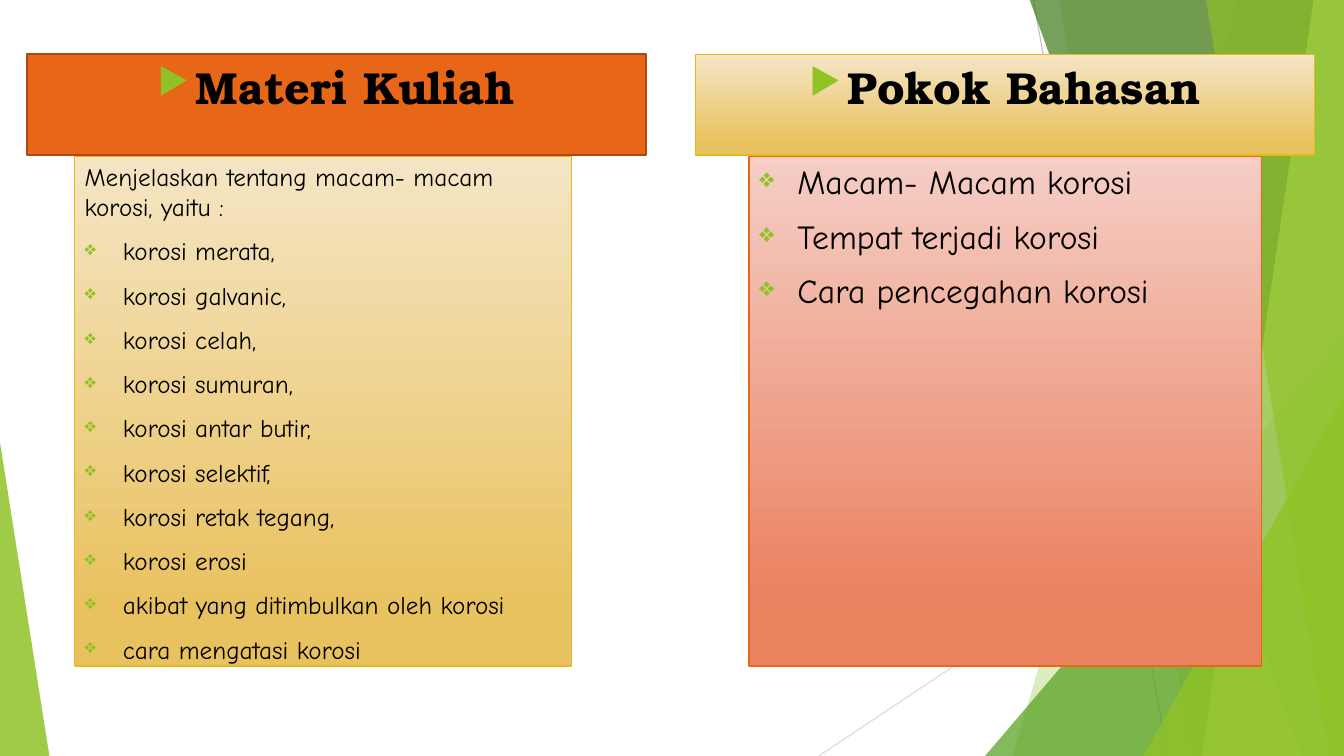
import pptx
import pptx.util
import pptx.dml.color
import pptx.enum.shapes
import pptx.enum.text
import pptx.oxml.ns
from lxml import etree

Inches = pptx.util.Inches
Pt = pptx.util.Pt
SHAPES = pptx.enum.shapes.MSO_SHAPE
ALIGN = pptx.enum.text.PP_ALIGN
qn = pptx.oxml.ns.qn

COLORS = {
    "black": "000000", "green": "90C226", "mid green": "54A021",
    "dark green": "3F7819", "pale green": "C0E474",
    "grey": "BFBFBF", "light grey": "D9D9D9",
    "orange": "E76618", "dark orange": "AB4B12", "gold line": "E6B91E",
    "cream": "F5E5C5", "gold": "E9C260", "pink": "F5CEC5", "coral": "EA815F",
}
GOLD_FADE = ("cream", "gold")
CORAL_FADE = ("pink", "coral")

WIDTH, HEIGHT = 13.33, 7.5
BAND_TOP = -0.01
HEADER_TOP, HEADER_WIDTH, HEADER_HEIGHT = 0.54, 6.14, 1
LIST_TOP, LIST_HEIGHT = 1.55, 5.06
INDENT = 0.38

# start, end, colour
THIN_LINES = [
    ((10.25, 0), (11.58, HEIGHT), "grey"),
    ((WIDTH, 4.03), (8.12, HEIGHT), "light grey"),
]
# Bands run to the right edge: top-left x, bottom-left x, colour, opacity.
# Triangles: left, top, width, apex position, colour, opacity.
DECORATION = [
    ("band", 12.28, 10.04, "green", 30),
    ("band", 10.5, 11.83, "green", 20),
    ("triangle", 9.77, 3.33, 3.56, 1, "mid green", 72),
    ("band", 10.21, 12.91, "dark green", 70),
    ("band", 13.03, 11.92, "pale green", 70),
    ("band", 11.96, 13.18, "green", 65),
    ("triangle", 11.34, 3.93, 1.99, 1, "green", 80),
    ("triangle", 0, 4.39, 0.49, 0, "green", 85),
]
COLUMNS = [
    {
        "title": "Materi Kuliah", "header_left": 0.27,
        "header_fill": "orange", "header_line": ("dark orange", 1.5),
        "list_left": 0.74, "list_width": 4.93,
        "list_fill": GOLD_FADE, "list_line": ("gold line", 1), "size": 18,
        "intro": ["Menjelaskan tentang macam- macam korosi, yaitu :"],
        "items": [
            "korosi merata,", "korosi galvanic,", "korosi celah,",
            "korosi sumuran,", "korosi antar butir,", "korosi selektif,",
            "korosi retak tegang,", "korosi erosi",
            "akibat yang ditimbulkan oleh korosi", "cara mengatasi korosi",
        ],
    },
    {
        "title": "Pokok Bahasan", "header_left": 6.9,
        "header_fill": GOLD_FADE, "header_line": ("gold line", 1),
        "list_left": 7.43, "list_width": 5.08,
        "list_fill": CORAL_FADE, "list_line": ("orange", 1), "size": 24,
        "intro": [],
        "items": ["Macam- Macam korosi", "Tempat terjadi korosi",
                  "Cara pencegahan korosi"],
    },
]


def rgb(name):
    return pptx.dml.color.RGBColor.from_string(COLORS[name])


def add_thin_line(slide, start, end, color):
    line = slide.shapes.add_connector(
        pptx.enum.shapes.MSO_CONNECTOR.STRAIGHT,
        *(Inches(value) for value in start + end))
    line.line.color.rgb = rgb(color)
    line.line.width = Pt(0.75)
    etree.SubElement(line.element.spPr, qn("a:effectLst"))


def paint_translucent(shape, color, opacity):
    shape.shadow.inherit = False
    shape.line.fill.background()
    shape.fill.solid()
    shape.fill.fore_color.rgb = rgb(color)
    color_node = shape.element.find(".//" + qn("a:srgbClr"))
    etree.SubElement(color_node, qn("a:alpha"), val=str(opacity * 1000))


def add_band(slide, top_x, bottom_x, color, opacity):
    corners = [(top_x, BAND_TOP), (WIDTH, BAND_TOP),
               (WIDTH, HEIGHT), (bottom_x, HEIGHT)]
    points = [(Inches(x), Inches(y)) for x, y in corners]
    builder = slide.shapes.build_freeform(*points[0])
    builder.add_line_segments(points[1:], close=True)
    paint_translucent(builder.convert_to_shape(), color, opacity)


def add_triangle(slide, left, top, width, apex, color, opacity):
    """Add a triangle that stands on the bottom edge of the slide."""
    shape = slide.shapes.add_shape(
        SHAPES.ISOSCELES_TRIANGLE, Inches(left), Inches(top),
        Inches(width), Inches(HEIGHT - top))
    shape.adjustments[0] = apex
    paint_translucent(shape, color, opacity)


def add_box(slide, left, top, width, height, fill, line):
    """Add a rectangle; fill is a colour name or a (top, bottom) pair."""
    box = slide.shapes.add_shape(
        SHAPES.RECTANGLE, Inches(left), Inches(top),
        Inches(width), Inches(height))
    box.shadow.inherit = False
    if isinstance(fill, tuple):
        box.fill.gradient()
        box.fill.gradient_angle = 270
        for stop, color, position in zip(box.fill.gradient_stops, fill, (0, 0.88)):
            stop.color.rgb = rgb(color)
            stop.position = position
    else:
        box.fill.solid()
        box.fill.fore_color.rgb = rgb(fill)
    line_color, line_width = line
    box.line.color.rgb = rgb(line_color)
    box.line.width = Pt(line_width)
    box.text_frame.word_wrap = True
    box.text_frame.vertical_anchor = pptx.enum.text.MSO_ANCHOR.TOP
    return box


def add_text(box, lines, *, size, font, bold=False, align=ALIGN.LEFT, bullet=None):
    """Add one paragraph per line, using the empty first paragraph if there is one."""
    frame = box.text_frame
    for text in lines:
        para = frame.paragraphs[0] if not frame.text else frame.add_paragraph()
        para.alignment = align
        para.space_before = Pt(10)
        if bullet:
            add_bullet(para, bullet)
        span = para.add_run()
        span.text = text
        span.font.size = Pt(size)
        span.font.name = font
        span.font.bold = bold
        span.font.color.rgb = rgb("black")


def add_bullet(para, character):
    properties = para._p.get_or_add_pPr()
    properties.set("marL", str(Inches(INDENT)))
    properties.set("indent", str(-Inches(INDENT)))
    color = etree.SubElement(properties, qn("a:buClr"))
    etree.SubElement(color, qn("a:srgbClr"), val=COLORS["green"])
    etree.SubElement(properties, qn("a:buSzPct"), val="80000")
    etree.SubElement(properties, qn("a:buChar"), char=character)


def add_column(slide, column):
    header = add_box(slide, column["header_left"], HEADER_TOP, HEADER_WIDTH,
                     HEADER_HEIGHT, column["header_fill"], column["header_line"])
    add_text(header, [column["title"]], size=32, font="TeX Gyre Bonum",
             bold=True, align=ALIGN.CENTER, bullet="▶")
    box = add_box(slide, column["list_left"], LIST_TOP, column["list_width"],
                  LIST_HEIGHT, column["list_fill"], column["list_line"])
    style = {"size": column["size"], "font": "Comic Neue"}
    add_text(box, column["intro"], **style)
    add_text(box, column["items"], bullet="❖", **style)


def main():
    deck = pptx.Presentation()
    deck.slide_width, deck.slide_height = Inches(WIDTH), Inches(HEIGHT)
    slide = deck.slides.add_slide(deck.slide_layouts[6])
    for thin_line in THIN_LINES:
        add_thin_line(slide, *thin_line)
    for kind, *details in DECORATION:
        draw = add_band if kind == "band" else add_triangle
        draw(slide, *details)
    for column in COLUMNS:
        add_column(slide, column)
    deck.save("out.pptx")


if __name__ == "__main__":
    main()
